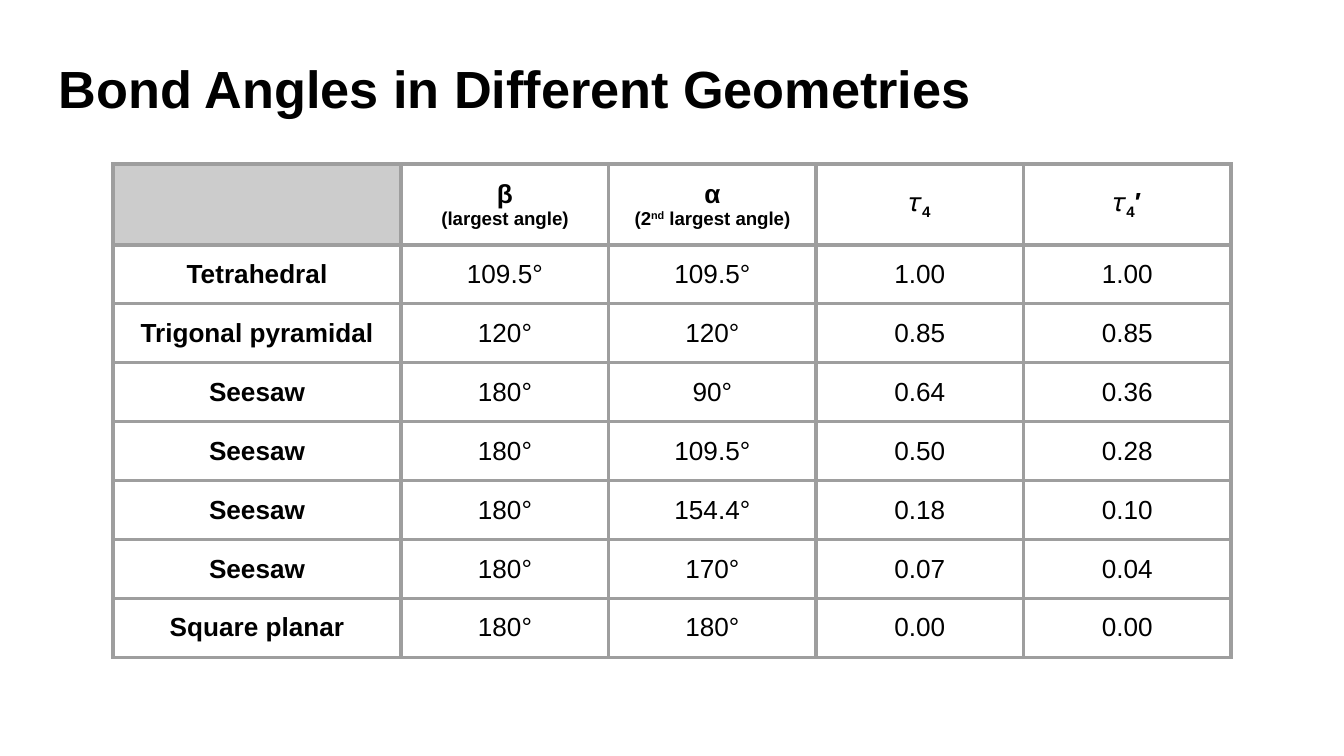
from dataclasses import dataclass

from lxml import etree
from pptx import Presentation
from pptx.dml.color import RGBColor
from pptx.enum.text import MSO_ANCHOR, PP_ALIGN
from pptx.oxml.ns import qn
from pptx.util import Inches, Pt

MIDDLE = MSO_ANCHOR.MIDDLE
CENTER = PP_ALIGN.CENTER


@dataclass(frozen=True)
class Theme:
    font: str = "Arial"
    ink: str = "000000"
    rule: str = "9E9E9E"
    shade: str = "CCCCCC"
    title: int = 28
    body: int = 14
    note: int = 10
    line: float = 2.25
    pad: float = 0.1


THEME = Theme()
SUB, SUPER = -25, 30
TITLE = "Bond Angles in Different Geometries"
HEADS = [
    [],
    [[("β", THEME.body, 0)], [("(largest angle)", THEME.note, 0)]],
    [
        [("α", THEME.body, 0)],
        [("(2", THEME.note, 0), ("nd", THEME.note, SUPER),
         (" largest angle)", THEME.note, 0)],
    ],
    [[("𝜏", THEME.body, 0), ("4", THEME.body, SUB)]],
    [[("𝜏", THEME.body, 0), ("4", THEME.body, SUB), ("′", THEME.body, 0)]],
]
ROWS = [
    ("Tetrahedral", "109.5°", "109.5°", "1.00", "1.00"),
    ("Trigonal pyramidal", "120°", "120°", "0.85", "0.85"),
    ("Seesaw", "180°", "90°", "0.64", "0.36"),
    ("Seesaw", "180°", "109.5°", "0.50", "0.28"),
    ("Seesaw", "180°", "154.4°", "0.18", "0.10"),
    ("Seesaw", "180°", "170°", "0.07", "0.04"),
    ("Square planar", "180°", "180°", "0.00", "0.00"),
]
WIDTHS = [2.14] + [1.54] * 4
HEIGHTS = [0.6] + [0.44] * len(ROWS)


def style(run, size, bold, shift=0):
    font = run.font
    font.name = THEME.font
    font.size = Pt(size)
    font.bold = bold
    font.color.rgb = RGBColor.from_string(THEME.ink)
    if shift:
        run._r.get_or_add_rPr().set("baseline", str(shift * 1000))


def inset(item):
    pad = Inches(THEME.pad)
    item.margin_left = item.margin_right = pad
    item.margin_top = item.margin_bottom = pad


def border(cell):
    props = cell._tc.get_or_add_tcPr()
    for side in ("lnL", "lnR", "lnT", "lnB"):
        line = etree.SubElement(props, qn(f"a:{side}"), w=str(Pt(THEME.line)))
        fill = etree.SubElement(line, qn("a:solidFill"))
        etree.SubElement(fill, qn("a:srgbClr"), val=THEME.rule)


def fill_cell(cell, lines, bold):
    inset(cell)
    cell.vertical_anchor = MIDDLE
    border(cell)
    if lines:
        cell.fill.background()
    else:
        cell.fill.solid()
        cell.fill.fore_color.rgb = RGBColor.from_string(THEME.shade)
    frame = cell.text_frame
    for i, parts in enumerate(lines):
        para = frame.add_paragraph() if i else frame.paragraphs[0]
        para.alignment = CENTER
        for text, size, shift in parts:
            run = para.add_run()
            run.text = text
            style(run, size, bold, shift)


def add_title(slide, left, top, width, height):
    box = slide.shapes.add_textbox(
        Inches(left), Inches(top), Inches(width), Inches(height))
    frame = box.text_frame
    frame.word_wrap = True
    inset(frame)
    frame.text = TITLE
    style(frame.paragraphs[0].runs[0], THEME.title, True)


def add_grid(slide, left, top, width, height):
    table = slide.shapes.add_table(
        len(HEIGHTS), len(WIDTHS), Inches(left), Inches(top),
        Inches(width), Inches(height)).table
    table.first_row = table.horz_banding = False
    for col, size in zip(table.columns, WIDTHS):
        col.width = Inches(width * size / sum(WIDTHS))
    for row, size in zip(table.rows, HEIGHTS):
        row.height = Inches(height * size / sum(HEIGHTS))
    for c, lines in enumerate(HEADS):
        fill_cell(table.cell(0, c), lines, True)
    for r, row in enumerate(ROWS, 1):
        for c, text in enumerate(row):
            fill_cell(table.cell(r, c), [[(text, THEME.body, 0)]], c == 0)


def main():
    deck = Presentation()
    deck.slide_width = Inches(10)
    deck.slide_height = deck.slide_width * 9 // 16
    slide = deck.slides.add_slide(deck.slide_layouts[6])
    add_title(slide, 0.34, 0.32, 9.32, 0.63)
    add_grid(slide, 0.84, 1.22, 8.32, 3.67)
    deck.save("out.pptx")


if __name__ == "__main__":
    main()
